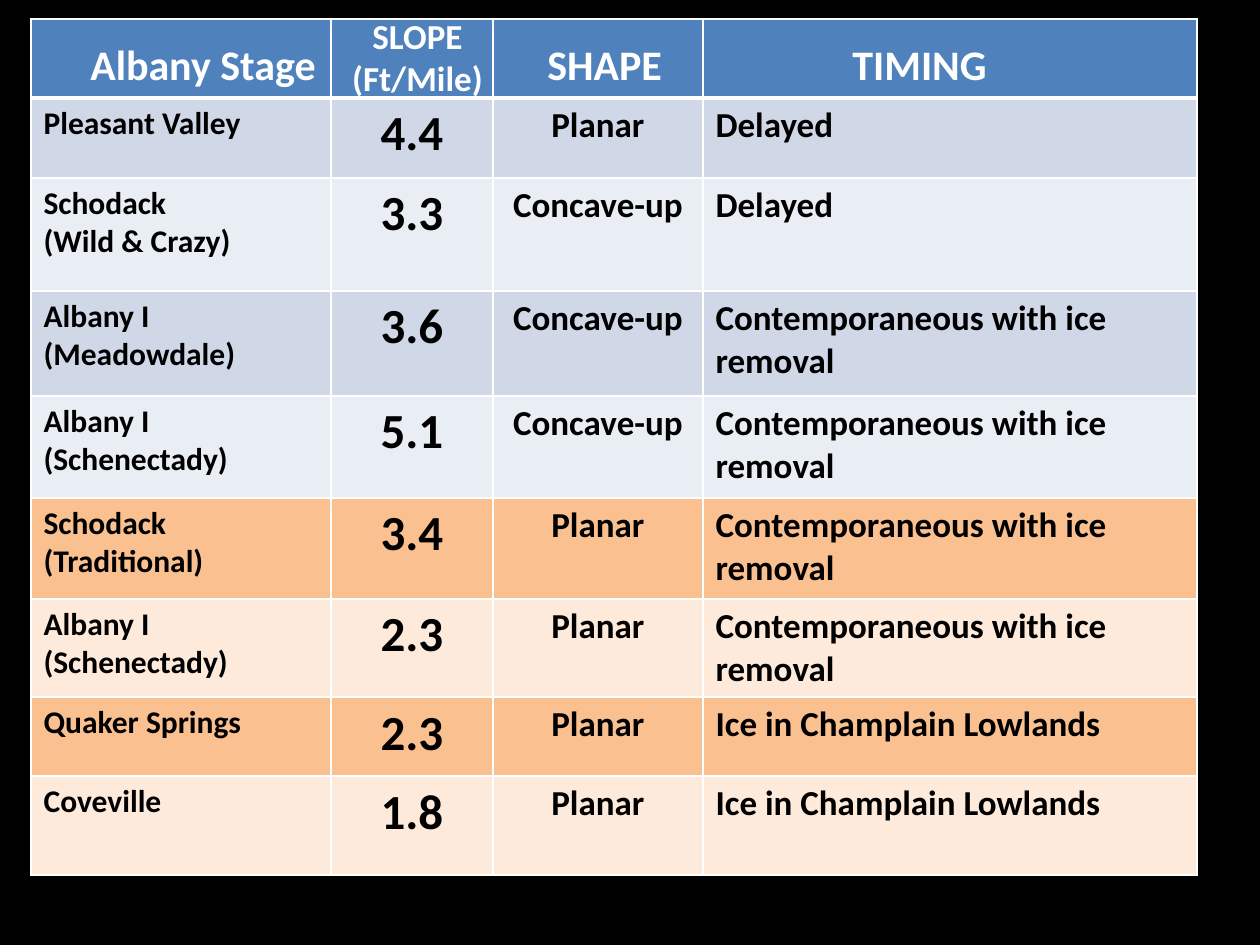
from dataclasses import dataclass

from lxml.etree import SubElement
from pptx import Presentation
from pptx.dml.color import RGBColor
from pptx.enum.text import MSO_AUTO_SIZE, PP_ALIGN
from pptx.oxml.ns import qn
from pptx.slide import Slide
from pptx.table import _Cell
from pptx.text.text import TextFrame
from pptx.util import Emu, Pt


@dataclass(frozen=True)
class Theme:
    font: str = "Calibri"
    background: str = "000000"
    ink: str = "000000"
    white: str = "FFFFFF"
    header: str = "4F81BD"
    blue_bands: tuple[str, str] = ("D0D8E8", "E9EDF4")
    orange_bands: tuple[str, str] = ("FAC090", "FDEADA")
    stage_size: int = 18
    slope_size: int = 28
    body_size: int = 20
    heading_size: int = 24
    border: int = 1
    header_border: int = 3


@dataclass(frozen=True)
class Stage:
    name: str
    slope: str
    shape: str
    timing: str
    height: int


@dataclass(frozen=True)
class Heading:
    text: str
    left: int
    top: int
    width: int
    height: int
    size: int
    wrap: bool = False


THEME = Theme()
EMU_PER_INCH = 914400
PX_PER_INCH = 126
TABLE_LEFT, TABLE_TOP = 31, 19
COLUMN_WIDTHS = (300, 162, 210, 494)
HEADER_HEIGHT = 79
CONTEMPORANEOUS = "Contemporaneous with ice removal"
LOWLANDS = "Ice in Champlain Lowlands"

STAGES = (
    Stage("Pleasant Valley", "4.4", "Planar", "Delayed", 80),
    Stage("Schodack\n(Wild & Crazy)", "3.3", "Concave-up", "Delayed", 113),
    Stage("Albany I (Meadowdale)", "3.6", "Concave-up", CONTEMPORANEOUS, 105),
    Stage("Albany I\n(Schenectady)", "5.1", "Concave-up", CONTEMPORANEOUS, 102),
    Stage("Schodack\n(Traditional)", "3.4", "Planar", CONTEMPORANEOUS, 101),
    Stage("Albany I\n(Schenectady)", "2.3", "Planar", CONTEMPORANEOUS, 98),
    Stage("Quaker Springs", "2.3", "Planar", LOWLANDS, 79),
    Stage("Coveville", "1.8", "Planar", LOWLANDS, 99),
)
BLUE_STAGE_COUNT = 4

HEADINGS = (
    Heading("Albany Stage", 78, 32, 253, 63, THEME.heading_size),
    Heading("SLOPE (Ft/Mile)", 294, 8, 247, 97, THEME.body_size, wrap=True),
    Heading("SHAPE", 535, 32, 141, 63, THEME.heading_size),
    Heading("TIMING", 840, 32, 161, 63, THEME.heading_size),
)


def px(length: int) -> Emu:
    return Emu(round(length * EMU_PER_INCH / PX_PER_INCH))


def write_text(frame: TextFrame, text: str, size: int, color: str, centered: bool) -> None:
    for index, line in enumerate(text.split("\n")):
        paragraph = frame.add_paragraph() if index else frame.paragraphs[0]
        paragraph.alignment = PP_ALIGN.CENTER if centered else PP_ALIGN.LEFT
        run = paragraph.add_run()
        run.text = line
        run.font.name = THEME.font
        run.font.size = Pt(size)
        run.font.bold = True
        run.font.color.rgb = RGBColor.from_string(color)


def style_cell(cell: _Cell, fill: str, top: int, bottom: int) -> None:
    properties = cell._tc.get_or_add_tcPr()
    widths = {"L": THEME.border, "R": THEME.border, "T": top, "B": bottom}
    for side, width in widths.items():
        line = SubElement(properties, qn(f"a:ln{side}"), w=str(Pt(width)))
        line_fill = SubElement(line, qn("a:solidFill"))
        SubElement(line_fill, qn("a:srgbClr"), val=THEME.white)
    cell.fill.solid()
    cell.fill.fore_color.rgb = RGBColor.from_string(fill)


def add_stage_table(slide: Slide) -> None:
    heights = (HEADER_HEIGHT, *(stage.height for stage in STAGES))
    frame = slide.shapes.add_table(
        len(heights), len(COLUMN_WIDTHS), px(TABLE_LEFT), px(TABLE_TOP),
        px(sum(COLUMN_WIDTHS)), px(sum(heights)),
    )
    table = frame.table
    for column, width in zip(table.columns, COLUMN_WIDTHS):
        column.width = px(width)
    for row, height in zip(table.rows, heights):
        row.height = px(height)
    for cell in table.rows[0].cells:
        style_cell(cell, THEME.header, THEME.border, THEME.header_border)
    for index, stage in enumerate(STAGES):
        bands = THEME.blue_bands if index < BLUE_STAGE_COUNT else THEME.orange_bands
        top = THEME.border if index else THEME.header_border
        contents = (
            (stage.name, THEME.stage_size, False),
            (stage.slope, THEME.slope_size, True),
            (stage.shape, THEME.body_size, True),
            (stage.timing, THEME.body_size, False),
        )
        for cell, (text, size, centered) in zip(table.rows[index + 1].cells, contents):
            style_cell(cell, bands[index % 2], top, THEME.border)
            write_text(cell.text_frame, text, size, THEME.ink, centered)


def add_heading(slide: Slide, heading: Heading) -> None:
    shape = slide.shapes.add_textbox(
        px(heading.left), px(heading.top), px(heading.width), px(heading.height)
    )
    frame = shape.text_frame
    frame.word_wrap = heading.wrap
    frame.auto_size = MSO_AUTO_SIZE.SHAPE_TO_FIT_TEXT
    write_text(frame, heading.text, heading.size, THEME.white, heading.wrap)


def main() -> None:
    presentation = Presentation()
    presentation.slide_width = px(1260)
    presentation.slide_height = px(945)
    slide = presentation.slides.add_slide(presentation.slide_layouts[6])
    slide.background.fill.solid()
    slide.background.fill.fore_color.rgb = RGBColor.from_string(THEME.background)
    add_stage_table(slide)
    for heading in HEADINGS:
        add_heading(slide, heading)
    presentation.save("out.pptx")


if __name__ == "__main__":
    main()
